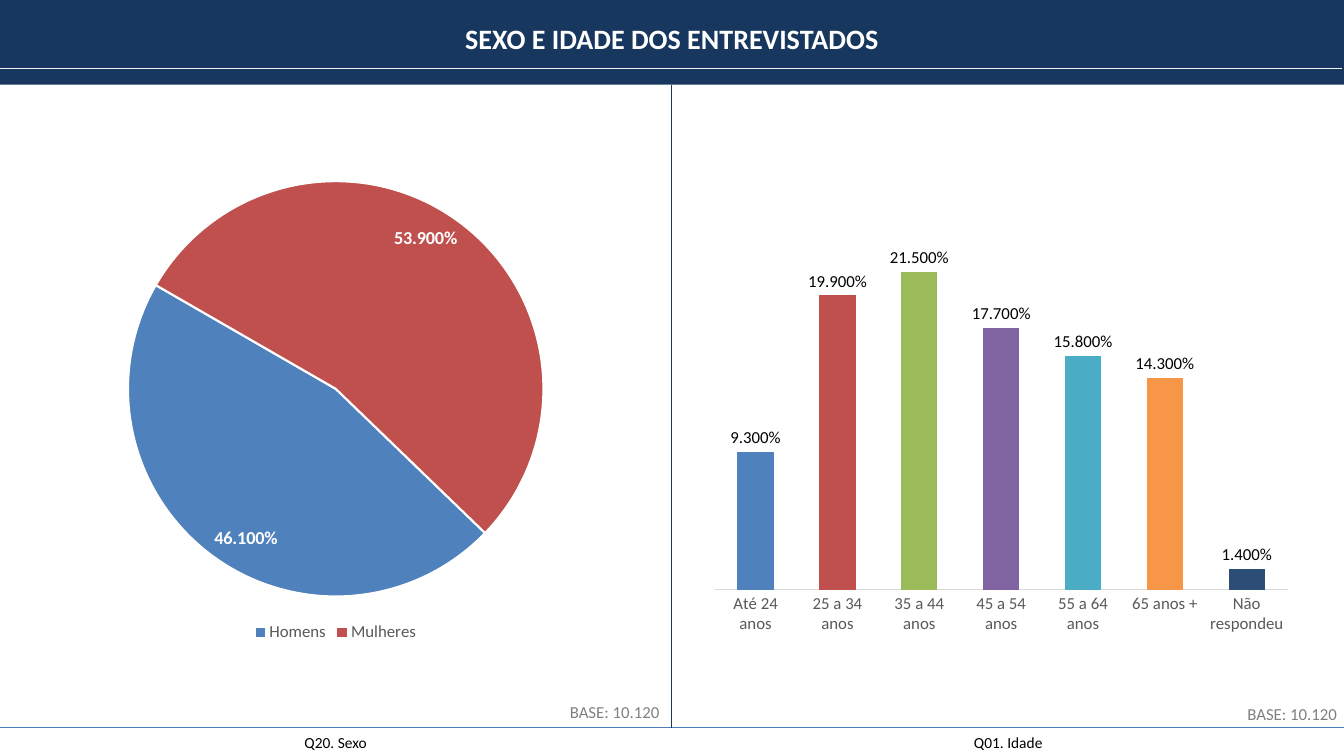
"""Build the slide on the sex and age of the people interviewed."""
from lxml import etree
from pptx import Presentation, util as u
from pptx.chart.data import CategoryChartData
from pptx.dml.color import RGBColor
from pptx.enum import chart as ch, shapes as sh, text as tx
from pptx.oxml.ns import qn

PX = 9144
FONT = "Calibri"
FORMAT = "#.#00%"
NAVY = RGBColor(0x17, 0x37, 0x5E)
BLUE = RGBColor(0x4B, 0x7E, 0xBC)
PALE = RGBColor(0xF2, 0xF2, 0xF2)
WHITE = RGBColor(0xFF, 0xFF, 0xFF)
BLACK = RGBColor(0, 0, 0)
GRAY = RGBColor(0x80, 0x80, 0x80)
DARK = RGBColor(0x59, 0x59, 0x59)
RULE = RGBColor(0xD9, 0xD9, 0xD9)
HUES = [RGBColor.from_string(hue) for hue in (
    "4F81BD", "C0504D", "9BBB59", "8064A2", "4BACC6", "F79646", "2C4D75")]


def write(frame, words, size=12, color=BLACK, bold=False, align=tx.PP_ALIGN.CENTER):
    frame.word_wrap = True
    frame.vertical_anchor = tx.MSO_ANCHOR.TOP
    frame.auto_size = tx.MSO_AUTO_SIZE.SHAPE_TO_FIT_TEXT
    para = frame.paragraphs[0]
    para.alignment = align
    run = para.add_run()
    run.text = words
    style(run.font, size, color, bold)


def style(font, size, color, bold=False):
    font.name, font.size, font.bold = FONT, u.Pt(size), bold
    font.color.rgb = color


deck = Presentation()
deck.slide_width, deck.slide_height = 1333 * PX, 750 * PX
slide = deck.slides.add_slide(deck.slide_layouts[5])
items = slide.shapes

banner = items.add_shape(sh.MSO_SHAPE.RECTANGLE, -1 * PX, 0, 1334 * PX, 84 * PX)
banner.shadow.inherit = False
banner.fill.solid()
banner.fill.fore_color.rgb = NAVY
banner.line.fill.background()

title = items.title
title.left, title.top, title.width, title.height = 0, 16 * PX, 1333 * PX, 44 * PX
write(title.text_frame, "SEXO E IDADE DOS ENTREVISTADOS", size=20, color=WHITE, bold=True)
banner._element.addnext(title._element)

for x1, y1, x2, y2, color, width in (
        (0, 722, 1333, 722, BLUE, 0.75),
        (-3, 68, 1331, 68, PALE, 1),
        (666, 84, 666, 722, NAVY, 1)):
    line = items.add_connector(
        sh.MSO_CONNECTOR.STRAIGHT, x1 * PX, y1 * PX, x2 * PX, y2 * PX)
    line.line.color.rgb = color
    line.line.width = u.Pt(width)
    etree.SubElement(line._element.spPr, qn("a:effectLst"))
    if x1 == x2:
        line.begin_connect(banner, 2)

for words, x, y, w, h, look in (
        ("Q20. Sexo", 0, 722, 666, 29, {"size": 11}),
        ("Q01. Idade", 667, 722, 666, 29, {"size": 11}),
        ("BASE: 10.120", 436, 691, 228, 30, {"color": GRAY, "align": tx.PP_ALIGN.RIGHT}),
        ("BASE: 10.120", 1108, 693, 228, 30, {"color": GRAY, "align": tx.PP_ALIGN.RIGHT})):
    box = items.add_textbox(x * PX, y * PX, w * PX, h * PX)
    write(box.text_frame, words, **look)

SEXES = {"Homens": 0.461, "Mulheres": 0.539}
AGES = {"Até 24 anos": 0.093, "25 a 34 anos": 0.199, "35 a 44 anos": 0.215,
        "45 a 54 anos": 0.177, "55 a 64 anos": 0.158, "65 anos +": 0.143,
        "Não respondeu": 0.014}
PIE, BAR = ch.XL_CHART_TYPE.PIE, ch.XL_CHART_TYPE.COLUMN_CLUSTERED
INSIDE, ABOVE = ch.XL_LABEL_POSITION.INSIDE_END, ch.XL_LABEL_POSITION.OUTSIDE_END
charts = []
for kind, shares, area, inner, place, size, color in (
        (PIE, SEXES, (30, 164, 606, 477), (0.16, 0.03, 0.68, 0.87), INSIDE, 13, WHITE),
        (BAR, AGES, (697, 134, 592, 537), (0.02, 0.02, 0.96, 0.82), ABOVE, 12, BLACK)):
    data = CategoryChartData(number_format=FORMAT)
    data.categories = shares.keys()
    data.add_series("Series 1", shares.values())
    chart = items.add_chart(kind, *[side * PX for side in area], data).chart
    charts.append(chart)
    chart.has_title = False
    chart.has_legend = kind == PIE
    style(chart.font, 10, BLACK)
    plot = chart.plots[0]
    plot.vary_by_categories = kind == PIE
    for spot, hue in enumerate(HUES[:len(shares)]):
        mark = plot.series[0].points[spot].format
        mark.fill.solid()
        mark.fill.fore_color.rgb = hue
        if kind == PIE:
            mark.line.color.rgb = WHITE
            mark.line.width = u.Pt(1.5)
    plot.has_data_labels = True
    tags = plot.data_labels
    tags.show_value, tags.show_percentage = True, False
    tags.number_format, tags.number_format_is_linked = FORMAT, False
    tags.position = place
    style(tags.font, size, color, bold=kind == PIE)
    field = chart._chartSpace.chart.plotArea
    for old in field.findall(qn("c:layout")):
        field.remove(old)
    layout = etree.Element(qn("c:layout"))
    field.insert(0, layout)
    manual = etree.SubElement(layout, qn("c:manualLayout"))
    for key, val in zip(("layoutTarget", "xMode", "yMode", "x", "y", "w", "h"),
                        ("inner", "edge", "edge", *inner)):
        etree.SubElement(manual, qn("c:" + key)).set("val", str(val))

pie, bars = charts
legend = pie.legend
legend.position = ch.XL_LEGEND_POSITION.BOTTOM
legend.include_in_layout = False
style(legend.font, 12, DARK)
wheel = pie.plots[0]._element
angle = wheel.find(qn("c:firstSliceAng"))
if angle is None:
    angle = etree.SubElement(wheel, qn("c:firstSliceAng"))
angle.set("val", "134")

bars.plots[0].gap_width, bars.plots[0].overlap = 126, -27
scale = bars.value_axis
scale.minimum_scale, scale.maximum_scale = 0, 0.3
scale.has_major_gridlines = False
scale.visible = False
axis = bars.category_axis
axis.major_tick_mark = ch.XL_TICK_MARK.NONE
axis.format.line.color.rgb = RULE
axis.format.line.width = u.Pt(0.75)
style(axis.tick_labels.font, 12, DARK)

deck.save("out.pptx")
